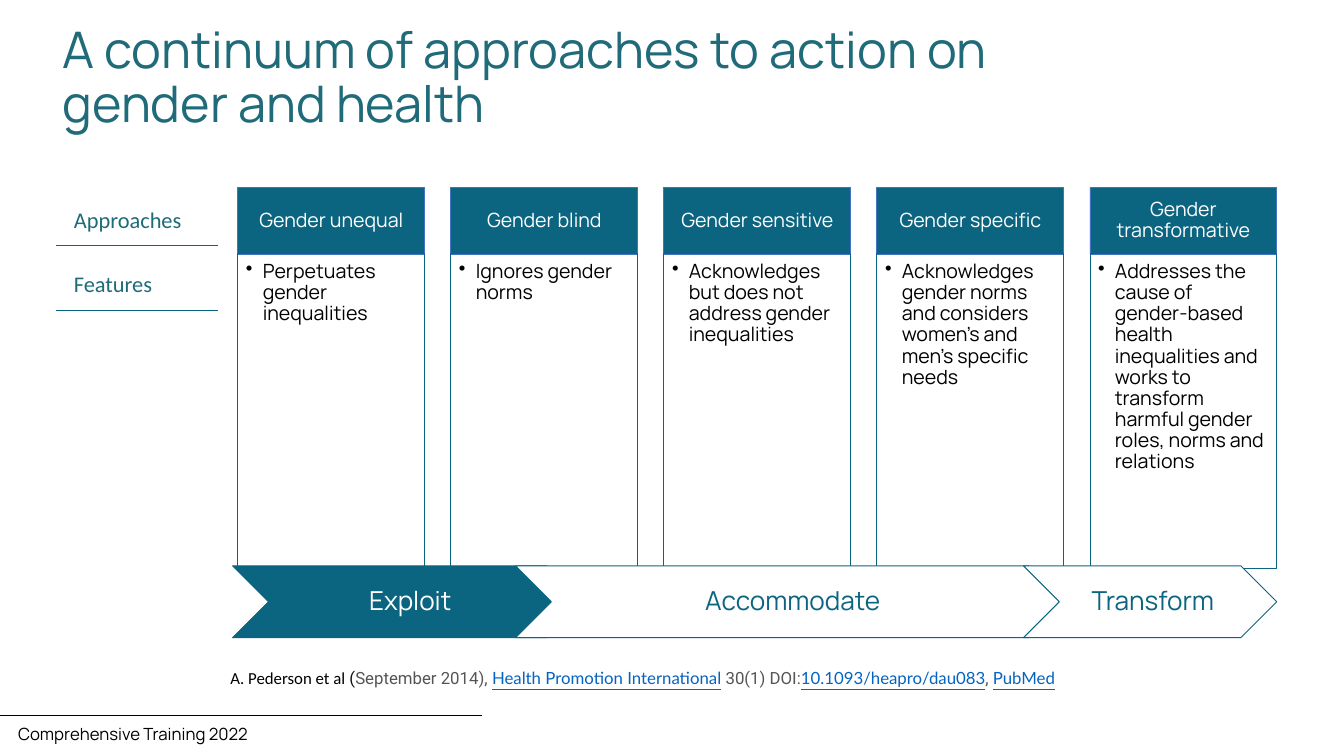
from lxml import etree
from pptx import Presentation
from pptx.dml.color import RGBColor
from pptx.enum.shapes import MSO_CONNECTOR, MSO_SHAPE
from pptx.enum.text import MSO_ANCHOR, MSO_AUTO_SIZE, PP_ALIGN
from pptx.oxml.ns import qn
from pptx.util import Pt

RECT, CHEVRON = MSO_SHAPE.RECTANGLE, MSO_SHAPE.CHEVRON
LINE = MSO_CONNECTOR.STRAIGHT
TOP, MIDDLE = MSO_ANCHOR.TOP, MSO_ANCHOR.MIDDLE
LEFT, CENTER = PP_ALIGN.LEFT, PP_ALIGN.CENTER
FIXED = MSO_AUTO_SIZE.NONE

HEX = {"teal": "0C6580", "title": "1F6B79", "edge": "4472C4", "link": "0563C1",
       "grey": "555555", "dark": "111111", "black": "000000", "white": "FFFFFF"}

TITLE = "A continuum of approaches to action on gender and health"
FOOTER = "Comprehensive Training 2022"
COLUMNS = [
    ("Gender unequal", "Perpetuates gender inequalities"),
    ("Gender blind", "Ignores gender norms"),
    ("Gender sensitive", "Acknowledges but does not address gender inequalities"),
    ("Gender specific",
     "Acknowledges gender norms and considers women's and men's specific needs"),
    ("Gender transformative",
     "Addresses the cause of gender-based health inequalities and works to "
     "transform harmful gender roles, norms and relations"),
]
STAGES = [("Exploit", 346, 521, "teal", "white"),
          ("Accommodate", 767, 817, "white", "teal"),
          ("Transform", 1523, 377, "white", "teal")]
LABELS = [("Approaches", 302), ("Features", 397)]
RULES = [(-8, 717, 1065, "black", 0.5),
         (83, 325, 365, "teal", 0.75),
         (83, 325, 462, "teal", 0.75)]
SOURCE = [
    ("A. Pederson et al", "Calibri", "black", False),
    (" (", "Roboto", "dark", False),
    ("September 2014), ", "Roboto", "grey", False),
    ("Health Promotion International", "Lato", "link", True),
    (" 30(1) DOI:", "Roboto", "grey", False),
    ("10.1093/heapro/dau083", "Lato", "link", True),
    (", ", "Roboto", "grey", False),
    ("PubMed", "Lato", "link", True),
]

HEAD = {"size": 21, "color": "white", "align": CENTER, "anchor": MIDDLE,
        "space": 0.9, "inset": (16, 9, 16, 9)}
BODY = {"size": 21, "space": 0.9, "inset": (12, 12, 16, 18), "bullet": True}
STAGE = {"size": 28, "align": CENTER, "anchor": MIDDLE,
         "space": 0.9, "inset": (12, 4, 4, 4)}
LABEL = {"size": 24, "face": "Calibri", "color": "title"}


def px(n):
    return n * 9144


def rgb(name):
    return RGBColor.from_string(HEX[name])


def style(font, size, face, color, under=False):
    values = {"size": Pt(size), "name": face, "underline": under}
    for key, value in values.items():
        setattr(font, key, value)
    font.color.rgb = rgb(color)


def write(shape, runs, size=18, face="Manrope", color="black", align=LEFT,
          anchor=TOP, space=1.0, inset=(10, 5, 10, 5), bullet=False):
    frame = shape.text_frame
    sides = ("margin_left", "margin_top", "margin_right", "margin_bottom")
    values = dict(zip(sides, map(px, inset)), word_wrap=True,
                  auto_size=FIXED, vertical_anchor=anchor)
    for key, value in values.items():
        setattr(frame, key, value)
    para = frame.paragraphs[0]
    para.alignment, para.line_spacing = align, space
    if bullet:
        props = para._p.get_or_add_pPr()
        props.set("marL", str(px(25)))
        props.set("indent", str(px(-25)))
        etree.SubElement(props, qn("a:buChar")).set("char", "•")
    if isinstance(runs, str):
        runs = [(runs, face, color, False)]
    for text, name, tint, under in runs:
        run = para.add_run()
        run.text = text
        style(run.font, size, name, tint, under)


def text(slide, box, runs, **look):
    write(slide.shapes.add_textbox(*map(px, box)), runs, **look)


def block(slide, kind, box, words, fill, edge, **look):
    shape = slide.shapes.add_shape(kind, *map(px, box))
    shape.shadow.inherit = False
    if fill:
        shape.fill.solid()
        shape.fill.fore_color.rgb = rgb(fill)
    else:
        shape.fill.background()
    shape.line.color.rgb = rgb(edge)
    shape.line.width = Pt(1)
    write(shape, words, **look)


def rule(slide, left, right, y, color, width):
    line = slide.shapes.add_connector(LINE, *map(px, (left, y, right, y)))
    line.line.color.rgb = rgb(color)
    line.line.width = Pt(width)
    etree.SubElement(line._element.spPr, qn("a:effectLst"))


def main():
    deck = Presentation()
    deck.slide_width, deck.slide_height = px(2000), px(1125)
    slide = deck.slides.add_slide(deck.slide_layouts[5])

    title = slide.shapes.title
    title.left, title.top, title.width, title.height = map(px, (83, 32, 1458, 122))
    write(title, TITLE, size=54, color="title", space=0.9)

    text(slide, (17, 1072, 658, 40), FOOTER)
    text(slide, (333, 989, 1429, 40), SOURCE)

    for i, (name, feature) in enumerate(COLUMNS):
        left = 354 + i * 317
        block(slide, RECT, (left, 279, 278, 99), name, "teal", "edge", **HEAD)
        block(slide, RECT, (left, 377, 278, 469), feature, None, "teal", **BODY)

    for name, top in LABELS:
        text(slide, (100, top, 329, 61), name, **LABEL)

    for name, left, width, fill, color in STAGES:
        block(slide, CHEVRON, (left, 842, width, 107), name, fill, "teal",
              color=color, **STAGE)

    for item in RULES:
        rule(slide, *item)

    deck.save("out.pptx")


if __name__ == "__main__":
    main()
